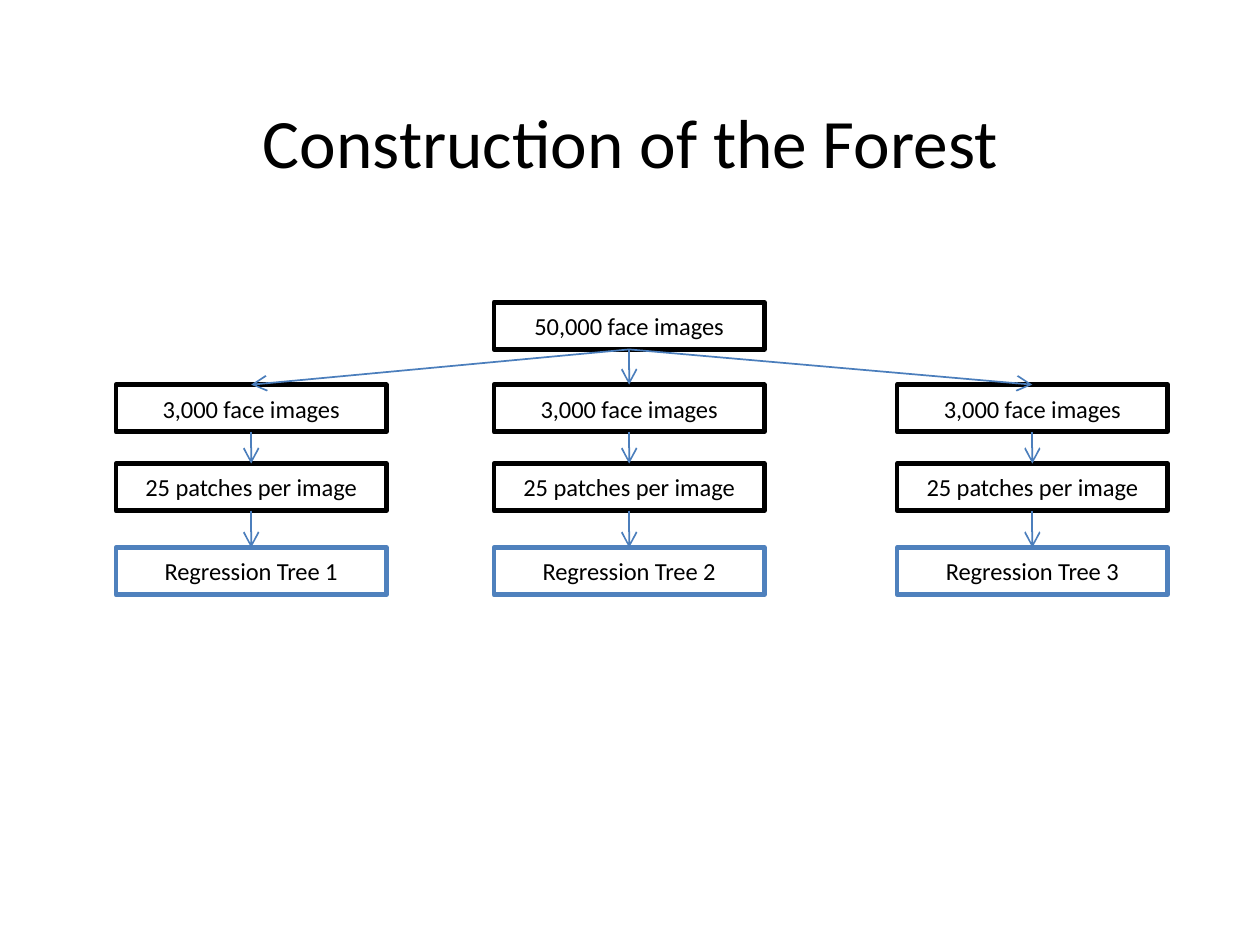
from lxml import etree
from pptx import Presentation
from pptx.dml.color import RGBColor
from pptx.enum import shapes, text
from pptx.oxml.ns import qn
from pptx.util import Inches, Pt

BLACK = RGBColor(0x00, 0x00, 0x00)
WHITE = RGBColor(0xFF, 0xFF, 0xFF)
BLUE = RGBColor(0x4F, 0x81, 0xBD)
ARROW_BLUE = RGBColor(0x4B, 0x7E, 0xBC)


def add_box(s, left, top, label, line_color):
    sp = s.shapes.add_shape(shapes.MSO_SHAPE.RECTANGLE, Inches(left), Inches(top),
                            Inches(1.61), Inches(0.28))
    sp.shadow.inherit = False
    sp.fill.solid()
    sp.fill.fore_color.rgb = WHITE
    sp.line.color.rgb = line_color
    sp.line.width = Pt(2)
    tf = sp.text_frame
    tf.margin_top = tf.margin_bottom = Inches(0.04)
    tf.vertical_anchor = text.MSO_ANCHOR.MIDDLE
    tf.text = label
    p = tf.paragraphs[0]
    p.alignment = text.PP_ALIGN.CENTER
    r = p.runs[0]
    r.font.name = "Calibri"
    r.font.size = Pt(10.5)
    r.font.color.rgb = BLACK
    return sp


def add_arrow(s, upper, lower):
    cx = s.shapes.add_connector(shapes.MSO_CONNECTOR.STRAIGHT, 0, 0, 0, 0)
    cx.begin_connect(upper, 2)
    cx.end_connect(lower, 0)
    cx.line.color.rgb = ARROW_BLUE
    cx.line.width = Pt(0.75)
    etree.SubElement(cx.line._get_or_add_ln(), qn("a:tailEnd"), type="arrow")
    etree.SubElement(cx._element.spPr, qn("a:effectLst"))


prs = Presentation()
prs.slide_width = Inches(7.5)
prs.slide_height = Inches(7.5 * 3 / 4)
s = prs.slides.add_slide(prs.slide_layouts[5])

title = s.shapes.title
title.left, title.top = Inches(0.26), Inches(0.49)
title.width, title.height = Inches(6.99), Inches(0.63)
tf = title.text_frame
tf.text = "Construction of the Forest"
tf.margin_left = tf.margin_right = tf.margin_top = tf.margin_bottom = Inches(0.1)
tf.vertical_anchor = text.MSO_ANCHOR.TOP
tf.auto_size = text.MSO_AUTO_SIZE.NONE
p = tf.paragraphs[0]
p.alignment = text.PP_ALIGN.CENTER
r = p.runs[0]
r.font.name = "Calibri"
r.font.size = Pt(29.7)
r.font.color.rgb = BLACK

root = add_box(s, 2.94, 1.8, "50,000 face images", BLACK)
for number, left in enumerate((0.69, 2.94, 5.34), start=1):
    steps = (
        (2.29, "3,000 face images", BLACK),
        (2.76, "25 patches per image", BLACK),
        (3.26, f"Regression Tree {number}", BLUE),
    )
    upper = root
    for top, label, line_color in steps:
        lower = add_box(s, left, top, label, line_color)
        add_arrow(s, upper, lower)
        upper = lower

prs.save("out.pptx")
